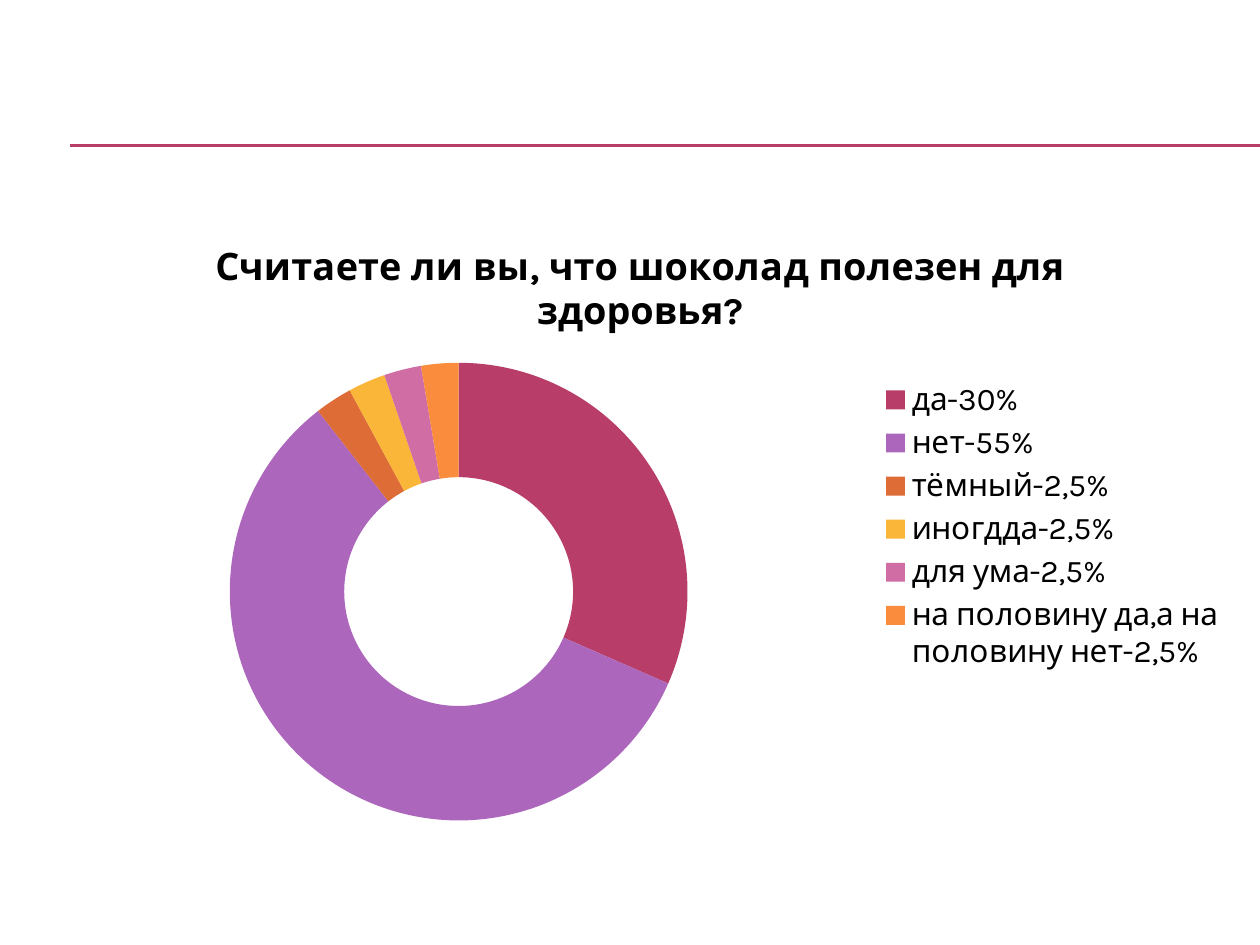
from lxml.etree import SubElement
from pptx import Presentation
from pptx.chart.data import CategoryChartData
from pptx.dml.color import RGBColor
from pptx.enum.chart import XL_CHART_TYPE as ChartType, XL_LEGEND_POSITION as LegendPos
from pptx.enum.shapes import MSO_CONNECTOR as Connector
from pptx.oxml.ns import qn
from pptx.util import Pt

BLACK = RGBColor(0x00, 0x00, 0x00)
RASPBERRY = RGBColor(0xB8, 0x3D, 0x68)
PURPLE = RGBColor(0xAC, 0x66, 0xBB)
RUST = RGBColor(0xDE, 0x6C, 0x36)
AMBER = RGBColor(0xF9, 0xB6, 0x39)
PINK = RGBColor(0xCF, 0x6D, 0xA4)
ORANGE = RGBColor(0xFA, 0x8D, 0x3D)

FONT = "Karla"
SLIDE_W, SLIDE_H = 720, 540
QUESTION = "Считаете ли вы, что шоколад полезен для здоровья?"
ANSWERS = [
    ("да-30%", 30, RASPBERRY),
    ("нет-55%", 55, PURPLE),
    ("тёмный-2,5%", 2.5, RUST),
    ("иногдда-2,5%", 2.5, AMBER),
    ("для ума-2,5%", 2.5, PINK),
    ("на половину да,а на половину нет-2,5%", 2.5, ORANGE),
]


def format_font(font, size, bold=False):
    for name, value in {"name": FONT, "size": Pt(size), "bold": bold}.items():
        setattr(font, name, value)
    font.color.rgb = BLACK


def add_rule(s, y):
    """Add a thin line from the left margin to the right slide edge."""
    line = s.shapes.add_connector(Connector.STRAIGHT, Pt(40.3), Pt(y), Pt(SLIDE_W), Pt(y))
    line.line.color.rgb = RASPBERRY
    line.line.width = Pt(0.75)
    SubElement(line._element.spPr, qn("a:effectLst"))


def add_answer_chart(s, left, top, width, height):
    names, values, colors = zip(*ANSWERS)
    data = CategoryChartData()
    data.categories = names
    data.add_series(QUESTION, values)
    chart = s.shapes.add_chart(
        ChartType.DOUGHNUT, Pt(left), Pt(top), Pt(width), Pt(height), data
    ).chart
    format_font(chart.font, 18)

    chart.has_title = True
    tf = chart.chart_title.text_frame
    tf.text = QUESTION
    format_font(tf.paragraphs[0].runs[0].font, 21.6, bold=True)
    chart.chart_title.include_in_layout = False

    chart.has_legend = True
    chart.legend.position = LegendPos.RIGHT
    chart.legend.include_in_layout = False

    plot = chart.plots[0]
    plot.vary_by_categories = True
    for i, color in enumerate(colors):
        fill = plot.series[0].points[i].format.fill
        fill.solid()
        fill.fore_color.rgb = color


def main():
    prs = Presentation()
    prs.slide_width, prs.slide_height = Pt(SLIDE_W), Pt(SLIDE_H)
    s = prs.slides.add_slide(prs.slide_layouts[6])
    for y in (82.8, 83.5):
        add_rule(s, y)
    add_answer_chart(s, 23.8, 122.4, 684, 356.4)
    prs.save("out.pptx")


if __name__ == "__main__":
    main()
